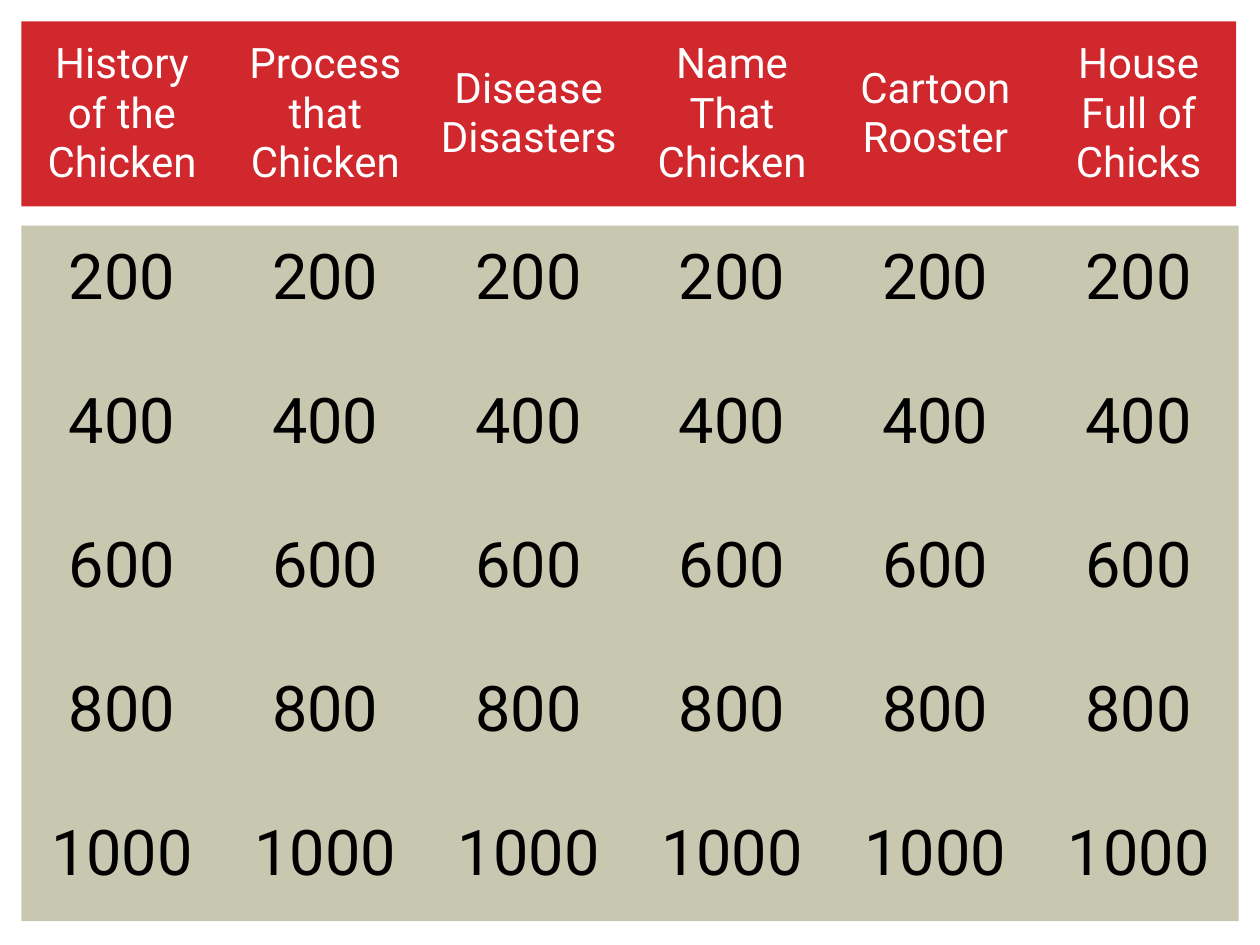
from lxml.etree import SubElement as Sub
from pptx import Presentation as Deck
from pptx.dml.color import RGBColor as Rgb
from pptx.enum.shapes import MSO_SHAPE as Kind
from pptx.enum.text import MSO_ANCHOR as Anchor, PP_ALIGN as Align
from pptx.oxml.ns import qn
from pptx.util import Cm, Pt

HUES = {"red": "D1282E", "sage": "C8C8B1", "white": "FFFFFF", "black": "000000"}
HEAD = {"size": Pt(24), "name": "Roboto", "bold": False}
CASH = {**HEAD, "size": Pt(36)}

TOPICS = ["History of the Chicken", "Process that Chicken", "Disease Disasters",
          "Name That Chicken", "Cartoon Rooster", "House Full of Chicks"]
PRIZES = range(200, 1001, 200)


class Board:
    def __init__(self, slide):
        self.slide = slide

    def hue(self, name):
        return Rgb.from_string(HUES[name])

    def panel(self, box, hue):
        rect = self.slide.shapes.add_shape(Kind.RECTANGLE, *map(Cm, box))
        rect.shadow.inherit = False
        rect.fill.solid()
        rect.fill.fore_color.rgb = self.hue(hue)
        rect.line.fill.background()

    def cell(self, cell, text, form, hue):
        # Clear borders and fill so the panels show through
        props = cell._tc.get_or_add_tcPr()
        for side in ("lnL", "lnR", "lnT", "lnB"):
            Sub(Sub(props, qn(f"a:{side}")), qn("a:noFill"))
        cell.fill.background()
        cell.text = text
        cell.vertical_anchor = Anchor.MIDDLE
        para = cell.text_frame.paragraphs[0]
        para.alignment = Align.CENTER
        font = para.runs[0].font
        for key, value in form.items():
            setattr(font, key, value)
        font.color.rgb = self.hue(hue)

    def table(self, left, top, wide, highs, rows):
        count = len(rows[0])
        grid = self.slide.shapes.add_table(
            len(rows), count, Cm(left), Cm(top),
            Cm(wide * count), Cm(sum(highs))).table
        grid.horz_banding = False
        for col in grid.columns:
            col.width = Cm(wide)
        for r, (high, texts) in enumerate(zip(highs, rows)):
            grid.rows[r].height = Cm(high)
            form, hue = (CASH, "black") if r else (HEAD, "white")
            for c, text in enumerate(texts):
                self.cell(grid.cell(r, c), text, form, hue)


def main():
    deck = Deck()
    deck.slide_width, deck.slide_height = Cm(25.4), Cm(19.05)
    board = Board(deck.slides.add_slide(deck.slide_layouts[6]))

    # Panels behind the prizes and the topics
    board.panel((0.43, 4.55, 24.54, 14.02), "sage")
    board.panel((0.43, 0.43, 24.49, 3.73), "red")

    # Topics on top, one row per prize below
    rows = [TOPICS] + [[str(prize)] * len(TOPICS) for prize in PRIZES]
    highs = [3.73] + [2.9] * len(PRIZES)
    board.table(0.41, 0.43, 4.1, highs, rows)

    deck.save("out.pptx")


if __name__ == "__main__":
    main()
